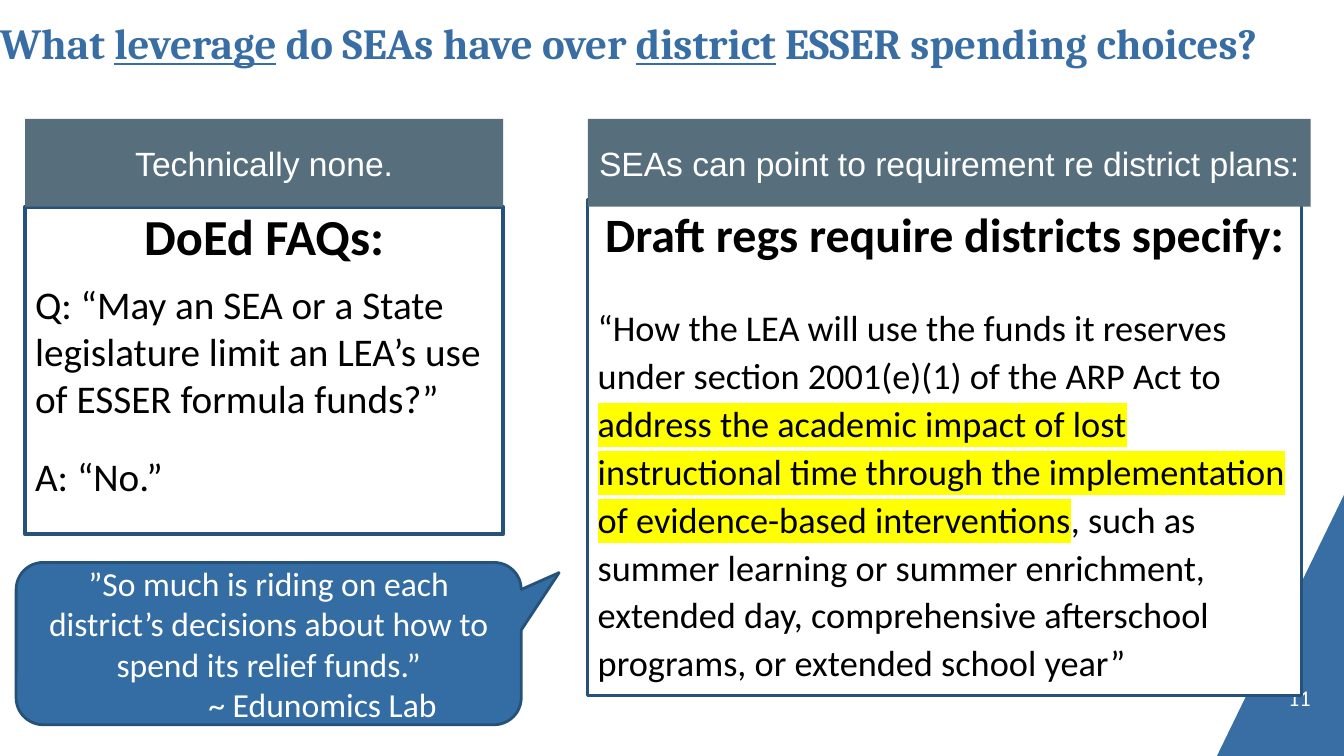
import pptx
import pptx.util
import pptx.dml.color
import pptx.enum.shapes
import pptx.enum.text
import pptx.oxml
import pptx.oxml.ns

In, Pt = pptx.util.Inches, pptx.util.Pt
MSO = pptx.enum.shapes.MSO_SHAPE
ANCHOR = pptx.enum.text.MSO_ANCHOR
ALIGN = pptx.enum.text.PP_ALIGN

W, H = 13.33, 7.5
COLORS = {"accent": "386EA3", "callout": "346DA3", "border": "265179", "header": "576F7D",
          "white": "FFFFFF", "black": "000000", "mark": "FFFF00"}


def rgb(name):
    return pptx.dml.color.RGBColor.from_string(COLORS[name])


def add_box(s, kind, box, fill=None, line_width=0, anchor=ANCHOR.TOP):
    sp = s.shapes.add_shape(kind, *map(In, box))
    sp.shadow.inherit = False
    if fill:
        sp.fill.solid()
        sp.fill.fore_color.rgb = rgb(fill)
    else:
        sp.fill.background()
    if line_width:
        sp.line.color.rgb = rgb("border")
        sp.line.width = Pt(line_width)
    else:
        sp.line.fill.background()
    sp.text_frame.word_wrap = True
    sp.text_frame.vertical_anchor = anchor
    return sp


def add_label(s, box, anchor):
    tf = s.shapes.add_textbox(*map(In, box)).text_frame
    tf.word_wrap = True
    tf.margin_left = tf.margin_right = tf.margin_top = tf.margin_bottom = 0
    tf.vertical_anchor = anchor
    return tf


def write(p, runs, size, font="Calibri", color="black", bold=False):
    """Fill a paragraph with (text, style) runs; style is None, 'underline' or 'mark'."""
    if p.alignment is None:
        p.alignment = ALIGN.LEFT
    for text, style in runs:
        r = p.add_run()
        r.text = text
        r.font.size, r.font.name, r.font.bold = Pt(size), font, bold
        r.font.color.rgb = rgb(color)
        if style == "underline":
            r.font.underline = True
        elif style == "mark":
            mark = pptx.oxml.parse_xml(
                f'<a:highlight {pptx.oxml.ns.nsdecls("a")}>'
                f'<a:srgbClr val="{COLORS["mark"]}"/></a:highlight>')
            fill = r.font._element.find(pptx.oxml.ns.qn("a:solidFill"))
            fill.addnext(mark)


def add_corner(s, box):
    # Triangle in the lower right corner with the slide number
    x, y, w, h = box
    fb = s.shapes.build_freeform(In(x + w), In(y))
    fb.add_line_segments([(In(x), In(y + h)), (In(x + w), In(y + h))], close=True)
    sp = fb.convert_to_shape()
    sp.shadow.inherit = False
    sp.fill.solid()
    sp.fill.fore_color.rgb = rgb("accent")
    sp.line.fill.background()
    p = add_label(s, (x + w - 0.83, y + h - 0.75, 0.5, 0.3), ANCHOR.BOTTOM).paragraphs[0]
    p.alignment = ALIGN.RIGHT
    write(p, [("11", None)], 16, color="white")


def add_title(s, box):
    p = add_label(s, box, ANCHOR.MIDDLE).paragraphs[0]
    write(p, [("What ", None), ("leverage", "underline"), (" do SEAs have over ", None),
              ("district", "underline"), (" ESSER spending choices?", None)],
          30.6, "Cambria", "accent", True)


def add_panel(s, header_box, header, body_box, fill, line_width, heading, heading_size,
              heading_layout, paragraphs, size, spacing, after):
    # Bordered body
    tf = add_box(s, MSO.RECTANGLE, body_box, fill, line_width).text_frame
    p = tf.paragraphs[0]
    p.line_spacing, p.space_after = heading_layout[0], Pt(heading_layout[1])
    write(p, [(heading, None)], heading_size, bold=True)
    for runs in paragraphs:
        p = tf.add_paragraph()
        p.line_spacing, p.space_before, p.space_after = spacing, Pt(10), Pt(after)
        write(p, runs, size)
    # Header band
    sp = add_box(s, MSO.ROUNDED_RECTANGLE, header_box, "header", anchor=ANCHOR.MIDDLE)
    sp.adjustments[0] = 0
    write(sp.text_frame.paragraphs[0], [(header, None)], 24, "Arial", "white")


def add_callout(s, box):
    sp = add_box(s, MSO.ROUNDED_RECTANGULAR_CALLOUT, box, "callout", 2, ANCHOR.MIDDLE)
    for i, value in enumerate((0.575, -0.437, 0.167)):
        sp.adjustments[i] = value
    tf = sp.text_frame
    write(tf.paragraphs[0], [("”So much is riding on each district’s decisions about how to "
                              "spend its relief funds.”", None)], 24, color="white")
    p = tf.add_paragraph()
    pPr = p._p.get_or_add_pPr()
    pPr.set("marL", str(In(1.73)))
    pPr.set("indent", "0")
    write(p, [("~ Edunomics Lab", None)], 24, color="white")


def main():
    prs = pptx.Presentation()
    prs.slide_width, prs.slide_height = In(W), In(H)
    s = prs.slides.add_slide(prs.slide_layouts[6])

    add_corner(s, (W - 1.26, H - 2.59, 1.26, 2.59))
    add_title(s, (0, -0.01, 13.18, 0.87))

    left, right, top, band = 0.25, 5.83, 1.18, 0.87
    add_panel(s, (left, top, 4.74, band), "Technically none.",
              (left, top + band, 4.74, 3.25), None, 3,
              "DoEd FAQs:", 36, (0.9, 0),
              [[("Q: “May an SEA or a State legislature limit an LEA’s use of ESSER "
                 "formula funds?”", None)],
               [("A: “No.”", None)]], 28, 1.0, 12)
    add_panel(s, (right, top, 7.17, band), "SEAs can point to requirement re district plans:",
              (right, 1.98, 7.08, 4.92), "white", 2.25,
              "Draft regs require districts specify:", 34.2, (1.0, 18),
              [[("“How the LEA will use the funds it reserves under section 2001(e)(1) of "
                 "the ARP Act to ", None),
                ("address the academic impact of lost instructional time through the "
                 "implementation of evidence-based interventions", "mark"),
                (", such as summer learning or summer enrichment, extended day, comprehensive "
                 "afterschool programs, or extended school year”", None)]], 25.9, 1.1, 18)
    add_callout(s, (0.16, 5.58, 5.01, 1.61))

    prs.save("out.pptx")


if __name__ == "__main__":
    main()
